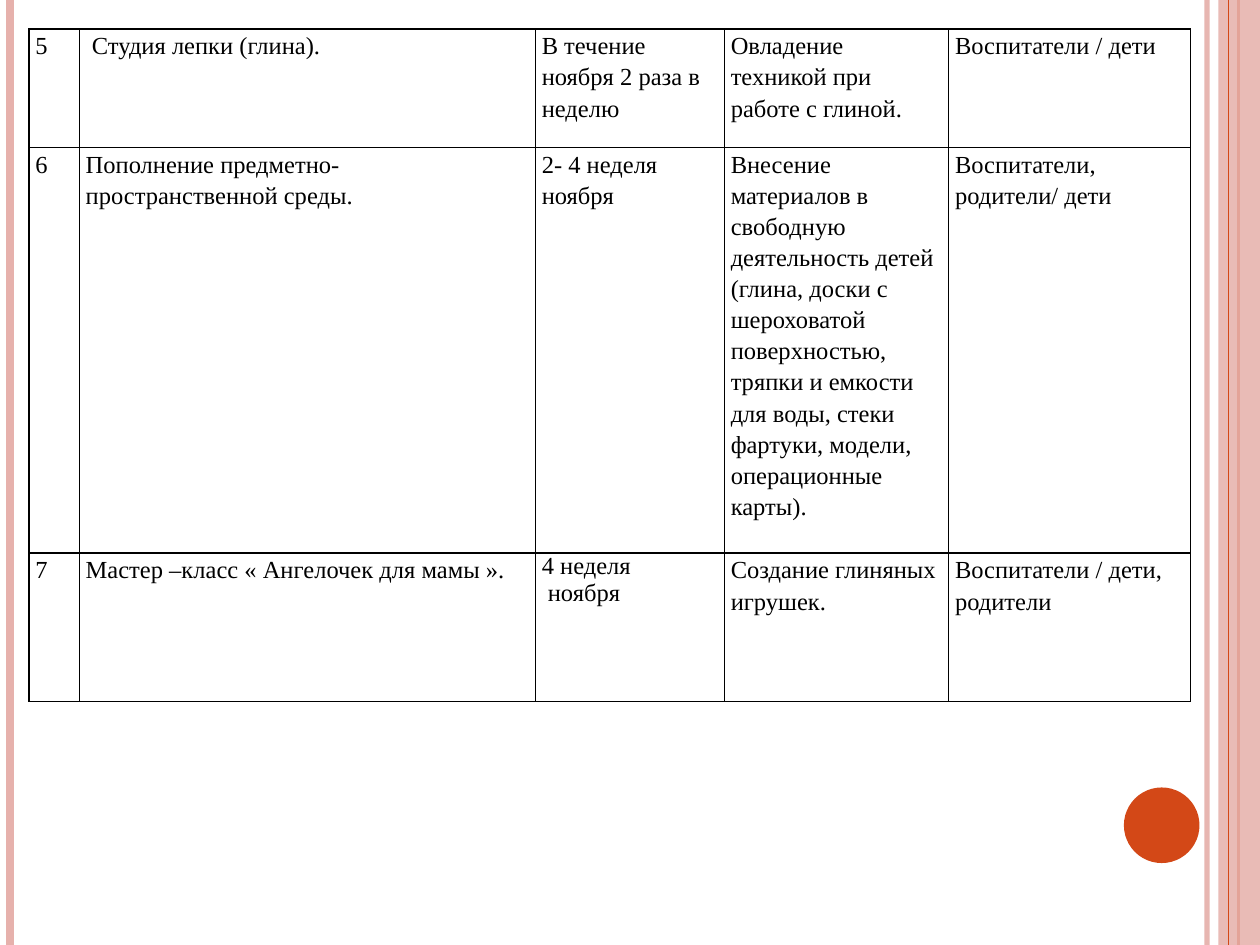
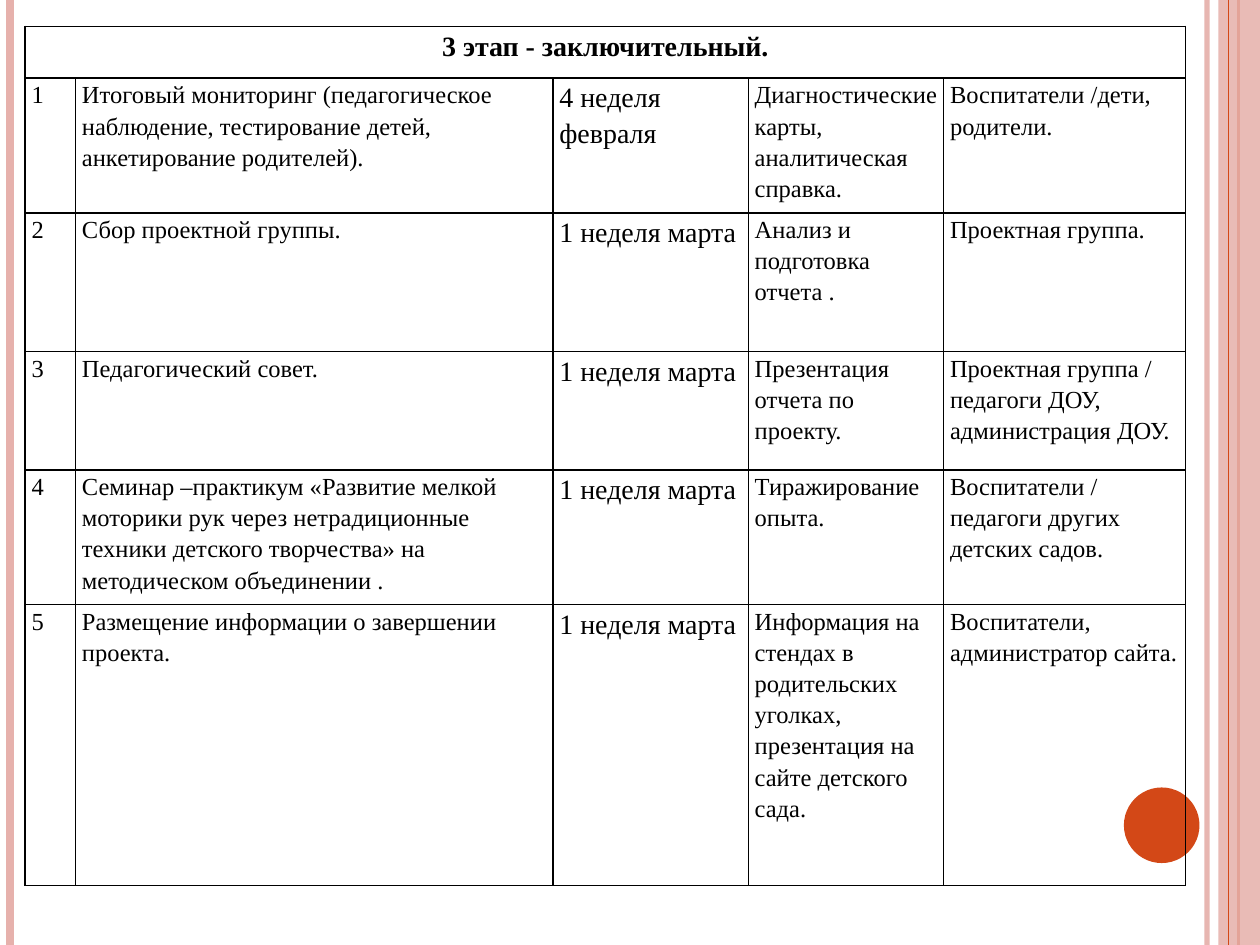
import pptx
import pptx.dml.color
import pptx.enum.shapes
import pptx.enum.text
import pptx.oxml
import pptx.oxml.ns
import pptx.util
from pptx.util import Inches

COLORS = {"text": "000000", "border": "000000", "pink": "E6B1AC", "orange": "D34817"}
FONT = "Times New Roman"
BODY_SIZE, LARGE_SIZE = 14, 16
BORDER_WIDTH = 1
TIME_COLUMN = 2

# Vertical lines: x, colour, width in points, opacity in percent
LINES_BEHIND_BAND = [
    (9.58, "pink", 3, 93),
    (0.08, "pink", 4.5, 100),
    (9.83, "orange", 1.5, 100),
]
LINES_OVER_BAND = [(9.75, "orange", 0.75, 100)]

STAGES = [
    {
        "left": 0.23, "top": 0.23, "heading": None,
        "columns": [0.4, 3.62, 1.5, 1.78, 1.92],
        "rows": [0.94, 3.22, 1.18],
        "time_size": BODY_SIZE,
        "cells": [
            ["5", " Студия лепки (глина).", "В течение ноября 2 раза в неделю",
             "Овладение техникой при работе с глиной.", "Воспитатели / дети"],
            ["6", "Пополнение предметно-пространственной среды.", "2- 4 неделя ноября",
             "Внесение материалов в свободную деятельность детей (глина, доски с "
             "шероховатой поверхностью, тряпки и емкости для воды, стеки фартуки, "
             "модели, операционные карты).",
             "Воспитатели, родители/ дети"],
            ["7", "Мастер –класс « Ангелочек для мамы ».", "4 неделя\n ноября",
             "Создание глиняных игрушек.", "Воспитатели / дети, родители"],
        ],
    },
    {
        "left": 0.2, "top": 0.21, "heading": "3 этап - заключительный.",
        "columns": [0.4, 3.79, 1.55, 1.55, 1.92],
        "rows": [0.41, 1.07, 1.1, 0.94, 1.07, 2.23],
        "time_size": LARGE_SIZE,
        "cells": [
            ["1", "Итоговый мониторинг (педагогическое наблюдение, тестирование детей, "
             "анкетирование родителей).", "4 неделя февраля",
             "Диагностические карты, аналитическая справка.",
             "Воспитатели /дети, родители."],
            ["2", "Сбор проектной группы.", "1 неделя марта",
             "Анализ и подготовка отчета .", "Проектная группа."],
            ["3", "Педагогический совет.", "1 неделя марта",
             "Презентация отчета по проекту.",
             "Проектная группа / педагоги ДОУ, администрация ДОУ."],
            ["4", "Семинар –практикум «Развитие мелкой моторики рук через нетрадиционные "
             "техники детского творчества» на методическом объединении .",
             "1 неделя марта", "Тиражирование опыта.",
             "Воспитатели / педагоги других детских садов."],
            ["5", "Размещение информации о завершении проекта.", "1 неделя марта",
             "Информация на стендах в родительских уголках, презентация на сайте "
             "детского сада.", "Воспитатели, администратор сайта."],
        ],
    },
]


def paint(color_format, name, opacity=100):
    """Set a colour by name, with its opacity in percent."""
    color_format.rgb = pptx.dml.color.RGBColor.from_string(COLORS[name])
    if opacity < 100:
        # The colour element is the newest srgbClr of the fill it belongs to
        color = color_format._xFill.find(pptx.oxml.ns.qn("a:srgbClr"))
        alpha = color.makeelement(pptx.oxml.ns.qn("a:alpha"), {"val": str(opacity * 1000)})
        color.append(alpha)


def add_vertical_lines(slide, lines):
    for x, color, width, opacity in lines:
        line = slide.shapes.add_connector(
            pptx.enum.shapes.MSO_CONNECTOR.STRAIGHT,
            Inches(x), 0, Inches(x), Inches(7.5))
        line.line.width = pptx.util.Pt(width)
        line.line.fill.solid()
        paint(line.line.fill.fore_color, color, opacity)
        properties = line._element.spPr
        properties.append(properties.makeelement(pptx.oxml.ns.qn("a:effectLst"), {}))


deck = pptx.Presentation()
deck.slide_width = Inches(10)
deck.slide_height = Inches(7.5)

for stage in STAGES:
    slide = deck.slides.add_slide(deck.slide_layouts[6])

    # Side bands and corner circle
    add_vertical_lines(slide, LINES_BEHIND_BAND)
    for shape_type, left, top, width, height, color, opacity in [
        (pptx.enum.shapes.MSO_SHAPE.RECTANGLE, 9.67, 0, 0.33, 7.5, "pink", 87),
        (pptx.enum.shapes.MSO_SHAPE.OVAL, 8.92, 6.25, 0.6, 0.6, "orange", 100),
    ]:
        shape = slide.shapes.add_shape(
            shape_type, Inches(left), Inches(top), Inches(width), Inches(height))
        shape.shadow.inherit = False
        shape.line.fill.background()
        shape.fill.solid()
        paint(shape.fill.fore_color, color, opacity)
    add_vertical_lines(slide, LINES_OVER_BAND)

    # Plan table
    columns, rows = stage["columns"], stage["rows"]
    table = slide.shapes.add_table(
        len(rows), len(columns), Inches(stage["left"]), Inches(stage["top"]),
        Inches(sum(columns)), Inches(sum(rows))).table
    table.first_row = False
    table.horz_banding = False
    for column, width in zip(table.columns, columns):
        column.width = Inches(width)
    for row, height in zip(table.rows, rows):
        row.height = Inches(height)

    contents = stage["cells"]
    if stage["heading"]:
        table.cell(0, 0).merge(table.cell(0, len(columns) - 1))
        contents = [[stage["heading"]] + [""] * (len(columns) - 1)] + contents

    for row_index, texts in enumerate(contents):
        is_heading = bool(stage["heading"]) and row_index == 0
        for column_index, text in enumerate(texts):
            cell = table.cell(row_index, column_index)
            cell.margin_left = cell.margin_right = Inches(0.05)
            cell.margin_top = cell.margin_bottom = 0
            properties = cell._tc.get_or_add_tcPr()
            for side in ("lnL", "lnR", "lnT", "lnB"):
                properties.append(pptx.oxml.parse_xml(
                    f'<a:{side} {pptx.oxml.ns.nsdecls("a")} '
                    f'w="{pptx.util.Pt(BORDER_WIDTH)}"><a:solidFill>'
                    f'<a:srgbClr val="{COLORS["border"]}"/></a:solidFill></a:{side}>'))
            cell.fill.background()
            if not text:
                continue

            size = BODY_SIZE
            if is_heading:
                size = LARGE_SIZE
            elif column_index == TIME_COLUMN:
                size = stage["time_size"]
            lines = text.split("\n")
            for line_index, line in enumerate(lines):
                frame = cell.text_frame
                para = frame.add_paragraph() if line_index else frame.paragraphs[0]
                if len(lines) == 1:
                    para.line_spacing = 1.15
                    para.space_before = para.space_after = pptx.util.Pt(6)
                if is_heading:
                    para.alignment = pptx.enum.text.PP_ALIGN.CENTER
                span = para.add_run()
                span.text = line
                span.font.name = FONT
                span.font.size = pptx.util.Pt(size)
                span.font.bold = is_heading
                paint(span.font.color, "text")

deck.save("out.pptx")
